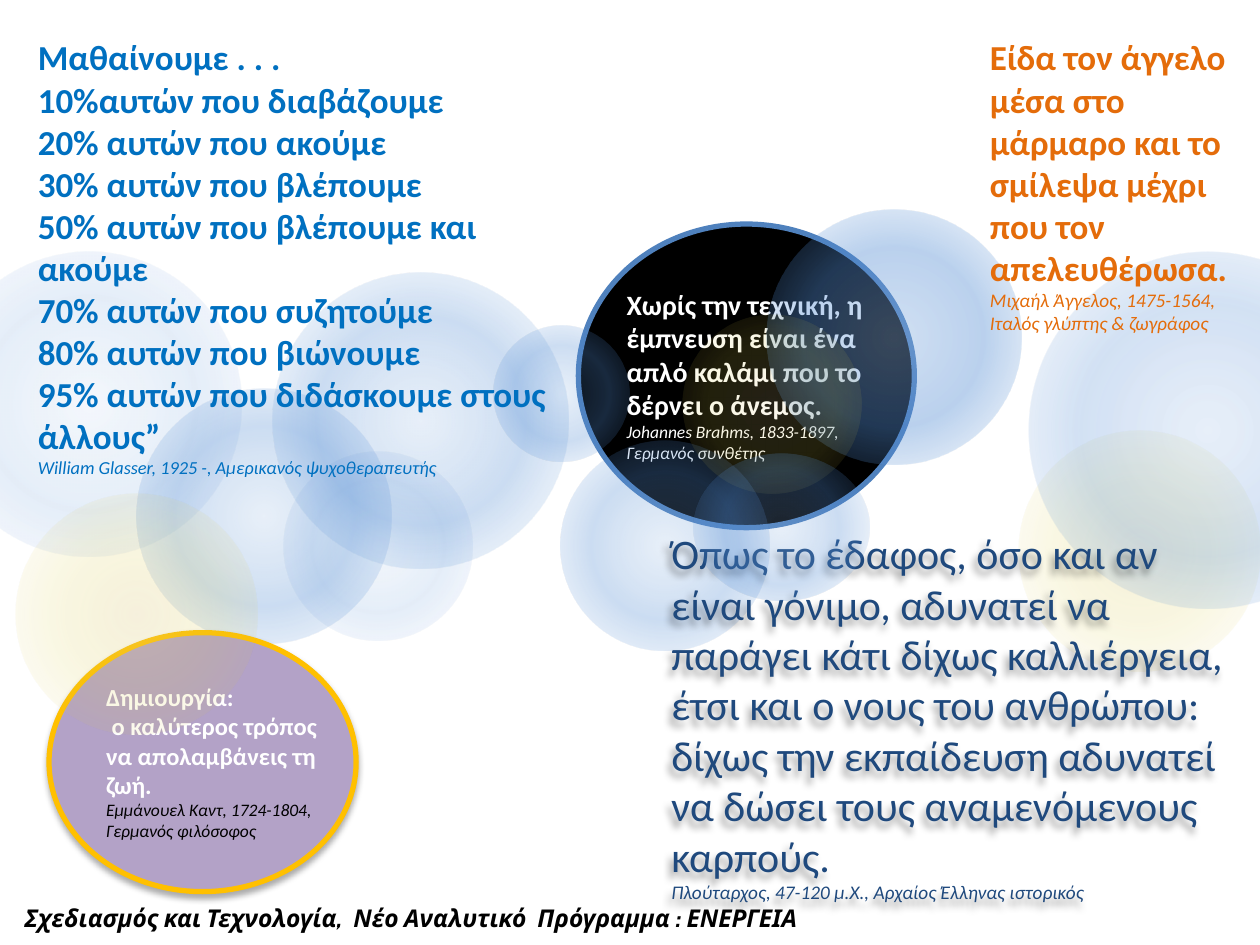
from dataclasses import dataclass
from typing import Optional

from lxml.etree import SubElement
from pptx import Presentation
from pptx.dml.color import RGBColor
from pptx.enum.shapes import MSO_SHAPE
from pptx.enum.text import MSO_AUTO_SIZE
from pptx.oxml.ns import qn
from pptx.util import Pt

WHITE = RGBColor(0xFF, 0xFF, 0xFF)
BLACK = RGBColor(0x00, 0x00, 0x00)
SKY = RGBColor(0x8E, 0xB4, 0xE3)
BLUE = RGBColor(0x55, 0x8E, 0xD5)
RIM_BLUE = RGBColor(0x4F, 0x81, 0xBD)
SAND = RGBColor(0xE3, 0xD1, 0x8F)
YELLOW = RGBColor(0xDF, 0xCD, 0x4B)
OCHRE = RGBColor(0xD6, 0xC3, 0x54)
ORANGE = RGBColor(0xE4, 0x6C, 0x0A)
NAVY = RGBColor(0x1F, 0x49, 0x7D)
CYAN = RGBColor(0x00, 0x70, 0xC0)
LILAC = RGBColor(0xB3, 0xA2, 0xC7)
GOLD = RGBColor(0xFF, 0xC0, 0x00)

BLUES = (SKY, BLUE, BLUE)
SKIES = (SKY, BLUE, SKY)
DEEP_BLUES = (BLUE, BLUE, BLUE)
YELLOWS = (SAND, YELLOW, OCHRE)


@dataclass(frozen=True)
class Shadow:
    alpha: float
    blur: float
    distance: float
    angle: float


@dataclass(frozen=True)
class Disc:
    left: float
    top: float
    width: float
    height: float
    fill: RGBColor
    rim: RGBColor
    shadow: Optional[Shadow] = None


@dataclass(frozen=True)
class Glow:
    left: float
    top: float
    width: float
    colors: tuple[RGBColor, RGBColor, RGBColor]
    center_alpha: int
    middle_alpha: int
    height: Optional[float] = None


@dataclass(frozen=True)
class Line:
    text: str
    size: float
    color: RGBColor
    bold: bool = False
    italic: bool = False
    face: str = "Calibri"


@dataclass(frozen=True)
class Quote:
    left: float
    top: float
    width: float
    height: float
    lines: tuple[Line, ...]
    shadow: Optional[Shadow] = None


def add_color(parent, color: RGBColor, alpha: float) -> None:
    srgb = SubElement(parent, qn("a:srgbClr"), val=str(color))
    SubElement(srgb, qn("a:alpha"), val=str(int(alpha * 1000)))


def add_shadow(shape, shadow: Optional[Shadow]) -> None:
    shape.shadow.inherit = False
    if shadow:
        effects = shape._element.spPr.find(qn("a:effectLst"))
        outer = SubElement(
            effects, qn("a:outerShdw"), blurRad=str(Pt(shadow.blur)),
            dist=str(Pt(shadow.distance)), dir=str(int(shadow.angle * 60000)),
            rotWithShape="0",
        )
        add_color(outer, BLACK, shadow.alpha)


def add_ellipse(slide, left: float, top: float, width: float, height: float):
    return slide.shapes.add_shape(
        MSO_SHAPE.OVAL, Pt(left), Pt(top), Pt(width), Pt(height))


def draw_disc(slide, disc: Disc) -> None:
    ellipse = add_ellipse(slide, disc.left, disc.top, disc.width, disc.height)
    ellipse.fill.solid()
    ellipse.fill.fore_color.rgb = disc.fill
    ellipse.line.color.rgb = disc.rim
    ellipse.line.width = Pt(3)
    add_shadow(ellipse, disc.shadow)


def draw_glow(slide, glow: Glow) -> None:
    ellipse = add_ellipse(
        slide, glow.left, glow.top, glow.width, glow.height or glow.width)
    ellipse.line.fill.background()
    add_shadow(ellipse, None)
    properties = ellipse._element.spPr
    gradient = SubElement(properties, qn("a:gradFill"), rotWithShape="1")
    properties.find(qn("a:prstGeom")).addnext(gradient)
    stops = SubElement(gradient, qn("a:gsLst"))
    alphas = (glow.center_alpha, glow.middle_alpha, 0)
    for position, color, alpha in zip((0, 50, 100), glow.colors, alphas):
        stop = SubElement(stops, qn("a:gs"), pos=str(position * 1000))
        add_color(stop, color, alpha)
    radial = SubElement(gradient, qn("a:path"), path="circle")
    SubElement(radial, qn("a:fillToRect"), l="50000", t="50000", r="50000", b="50000")


def draw_quote(slide, quote: Quote) -> None:
    box = slide.shapes.add_textbox(
        Pt(quote.left), Pt(quote.top), Pt(quote.width), Pt(quote.height))
    frame = box.text_frame
    frame.word_wrap = True
    frame.auto_size = MSO_AUTO_SIZE.SHAPE_TO_FIT_TEXT
    for index, line in enumerate(quote.lines):
        paragraph = frame.add_paragraph() if index else frame.paragraphs[0]
        paragraph.text = line.text
        font = paragraph.font
        font.name = line.face
        font.size = Pt(line.size)
        font.bold = line.bold
        font.italic = line.italic
        font.color.rgb = line.color
    if quote.shadow:
        add_shadow(box, quote.shadow)


ITEMS = (
    Disc(330.5, 128, 192, 173.5, BLACK, RIM_BLUE),
    Quote(351, 160.5, 158.5, 126, (
        Line("Χωρίς την τεχνική, η έμπνευση είναι ένα απλό καλάμι που το δέρνει ο άνεμος.", 16, WHITE, bold=True),
        Line("Johannes Brahms, 1833-1897, Γερμανός συνθέτης", 10, WHITE, italic=True))),
    Glow(78, 222, 145.5, BLUES, 20, 30),
    Glow(156, 156, 169, SKIES, 20, 30),
    Glow(282, 186, 78, DEEP_BLUES, 12, 29),
    Glow(-36, 144, 174, BLUES, 10, 15),
    Glow(162, 258, 108, BLUES, 10, 15),
    Glow(438, 120, 145.5, BLUES, 40, 40),
    Glow(320, 252, 120, BLUES, 20, 30),
    Glow(390, 180, 102, YELLOWS, 16, 15),
    Glow(582, 246, 138, YELLOWS, 30, 15),
    Glow(588, 144, 204, BLUES, 20, 26),
    Quote(558.5, 17, 150.5, 179, (
        Line("Είδα τον άγγελο μέσα στο μάρμαρο και το σμίλεψα μέχρι που τον απελευθέρωσα.", 20, ORANGE, bold=True),
        Line("Μιχαήλ Άγγελος, 1475-1564, Ιταλός γλύπτης & ζωγράφος", 11, ORANGE, italic=True))),
    Quote(376.5, 298, 341.5, 224, (
        Line("Όπως το έδαφος, όσο και αν είναι γόνιμο, αδυνατεί να παράγει κάτι δίχως καλλιέργεια, "
             "έτσι και ο νους του ανθρώπου: δίχως την εκπαίδευση αδυνατεί να δώσει τους "
             "αναμενόμενους καρπούς.", 24, NAVY),
        Line("Πλούταρχος, 47-120 μ.Χ., Αρχαίος Έλληνας ιστορικός", 11, NAVY, italic=True)),
        Shadow(40, 4, 4, 120)),
    Quote(14.5, 17, 323, 262, (
        Line("Μαθαίνουμε . . .\n10%αυτών που διαβάζουμε\n20% αυτών που ακούμε\n"
             "30% αυτών που βλέπουμε\n50% αυτών που βλέπουμε και ακούμε\n"
             "70% αυτών που συζητούμε\n80% αυτών που βιώνουμε\n"
             "95% αυτών που διδάσκουμε στους άλλους”", 20, CYAN, bold=True),
        Line("William Glasser, 1925 -, Αμερικανός ψυχοθεραπευτής", 10.5, CYAN, italic=True))),
    Disc(28, 361.5, 175.5, 148, LILAC, GOLD, Shadow(32, 3.5, 2.2, 90)),
    Quote(53.5, 386, 142, 99, (
        Line("Δημιουργία:", 14, WHITE, bold=True),
        Line(" ο καλύτερος τρόπος να απολαμβάνεις τη ζωή.", 14, WHITE, bold=True),
        Line("Εμμάνουελ Καντ, 1724-1804, Γερμανός φιλόσοφος", 10, BLACK, italic=True))),
    Glow(396, 259, 101, BLUES, 20, 30, height=84),
    Glow(9, 282, 138, YELLOWS, 30, 15),
    Quote(7, 512.5, 544, 24.5, (
        Line("Σχεδιασμός και Τεχνολογία,  Νέο Αναλυτικό  Πρόγραμμα : ΕΝΕΡΓΕΙΑ",
             14, BLACK, bold=True, italic=True, face="Cabin"),)),
)
PAINTERS = {Disc: draw_disc, Glow: draw_glow, Quote: draw_quote}


def main() -> None:
    deck = Presentation()
    deck.slide_width, deck.slide_height = Pt(720), Pt(540)
    slide = deck.slides.add_slide(deck.slide_layouts[6])
    for item in ITEMS:
        PAINTERS[type(item)](slide, item)
    deck.save("out.pptx")


if __name__ == "__main__":
    main()
